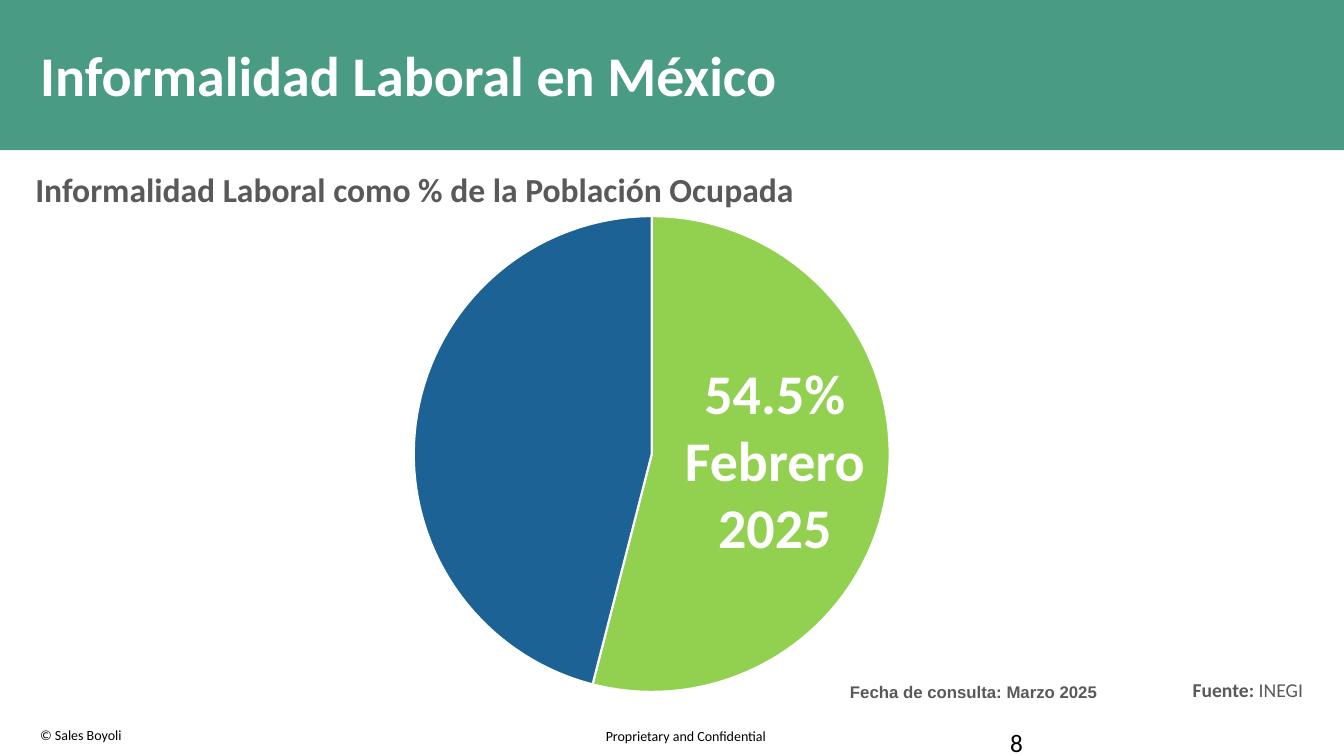
from dataclasses import dataclass

import pptx
import pptx.chart.data
import pptx.dml.color
import pptx.enum.chart
import pptx.enum.shapes
import pptx.enum.text
import pptx.oxml
import pptx.oxml.ns
import pptx.util
from pptx.util import Inches

Align = pptx.enum.text.PP_ALIGN
Anchor = pptx.enum.text.MSO_ANCHOR


@dataclass(frozen=True)
class Theme:
    font: str = "Calibri"
    date_font: str = "Arial"
    band: str = "4A9B83"
    white: str = "FFFFFF"
    black: str = "000000"
    gray: str = "595959"
    informal: str = "92D050"
    formal: str = "1D6294"
    headline: int = 40
    subtitle: int = 24
    page_number: int = 18
    source: int = 14
    date: int = 12
    footer: int = 10


THEME = Theme()


def rgb(color):
    return pptx.dml.color.RGBColor.from_string(color)


def add_band(page, width, height):
    band = page.shapes.add_shape(
        pptx.enum.shapes.MSO_SHAPE.RECTANGLE, 0, 0, width, height)
    band.shadow.inherit = False
    band.fill.solid()
    band.fill.fore_color.rgb = rgb(THEME.band)
    band.line.fill.background()


def add_text(page, place, lines, size, color, font=THEME.font, align=Align.LEFT,
             anchor=Anchor.TOP, spacing=None, inset=None, wrap=True):
    """Each line is a list of (text, bold) runs."""
    box = page.shapes.add_textbox(*(Inches(length) for length in place))
    frame = box.text_frame
    frame.word_wrap = wrap
    frame.vertical_anchor = anchor
    if inset is not None:
        frame.margin_left = frame.margin_right = Inches(inset)
        frame.margin_top = frame.margin_bottom = Inches(inset)
    for index, runs in enumerate(lines):
        para = frame.add_paragraph() if index else frame.paragraphs[0]
        para.alignment = align
        if spacing is not None:
            para.line_spacing = spacing
        for text, bold in runs:
            span = para.add_run()
            span.text = text
            span.font.name = font
            span.font.size = pptx.util.Pt(size)
            span.font.bold = bold
            span.font.color.rgb = rgb(color)


def set_plot_area(chart, width, height):
    """Centre the plot in the chart; sizes are fractions of the frame."""
    plot_area = chart.plots[0]._element.getparent()
    for layout in plot_area.findall(pptx.oxml.ns.qn("c:layout")):
        plot_area.remove(layout)
    parts = (("layoutTarget", "inner"), ("xMode", "edge"), ("yMode", "edge"),
             ("x", (1 - width) / 2), ("y", (1 - height) / 2),
             ("w", width), ("h", height))
    items = "".join(f'<c:{name} val="{value}"/>' for name, value in parts)
    plot_area.insert(0, pptx.oxml.parse_xml(
        f'<c:layout {pptx.oxml.ns.nsdecls("c")}>'
        f'<c:manualLayout>{items}</c:manualLayout></c:layout>'))


def add_pie(page, place, diameter, values, colors):
    data = pptx.chart.data.CategoryChartData()
    data.categories = [str(number + 1) for number in range(len(values))]
    data.add_series("Series 1", values)
    chart = page.shapes.add_chart(
        pptx.enum.chart.XL_CHART_TYPE.PIE,
        *(Inches(length) for length in place), data).chart
    chart.has_title = False
    chart.has_legend = False
    chart.font.name = THEME.font
    chart.font.size = pptx.util.Pt(THEME.footer)
    chart.font.color.rgb = rgb(THEME.black)
    plot = chart.plots[0]
    plot.vary_by_categories = True
    for index, color in enumerate(colors):
        style = plot.series[0].points[index].format
        style.fill.solid()
        style.fill.fore_color.rgb = rgb(color)
        style.line.color.rgb = rgb(THEME.white)
        style.line.width = pptx.util.Pt(1.5)
    set_plot_area(chart, diameter / place[2], diameter / place[3])


def main():
    deck = pptx.Presentation()
    deck.slide_width, deck.slide_height = Inches(13.33), Inches(7.5)
    page = deck.slides.add_slide(deck.slide_layouts[6])

    # Footer
    add_text(page, (5.91, 7.17, 1.81, 0.27),
             [[("Proprietary and Confidential", False)]],
             THEME.footer, THEME.black, wrap=False)
    add_text(page, (0.3, 7.16, 3.37, 0.27), [[("© Sales Boyoli", False)]],
             THEME.footer, THEME.black)
    add_text(page, (9.92, 7.17, 3.11, 0.25), [[("8", False)]],
             THEME.page_number, THEME.black)

    # Header
    add_band(page, deck.slide_width, Inches(1.49))
    add_text(page, (0.3, 0.14, 12.72, 1.27),
             [[("Informalidad Laboral en México", True)]],
             THEME.headline, THEME.white, anchor=Anchor.MIDDLE, spacing=0.9)
    add_text(page, (0.3, 1.63, 9.61, 0.5),
             [[("Informalidad Laboral como % de la Población Ocupada", True)]],
             THEME.subtitle, THEME.gray, inset=0.05)

    # Date and source
    add_text(page, (8.38, 6.71, 3.55, 0.3),
             [[("Fecha de consulta: Marzo 2025", True)]],
             THEME.date, THEME.gray, font=THEME.date_font, inset=0.05)
    add_text(page, (11.73, 6.68, 1.3, 0.57),
             [[("Fuente:", True), (" INEGI", False)]],
             THEME.source, THEME.gray, wrap=False)

    # Pie and its label
    add_pie(page, (3.18, 2, 6.57, 5.01), 4.72, (54, 46),
            (THEME.informal, THEME.formal))
    add_text(page, (6.67, 3.51, 2.03, 2.12),
             [[("54.5%", True)], [("Febrero 2025", True)]],
             THEME.headline, THEME.white, align=Align.CENTER,
             spacing=pptx.util.Pt(47.8))

    deck.save("out.pptx")


if __name__ == "__main__":
    main()
